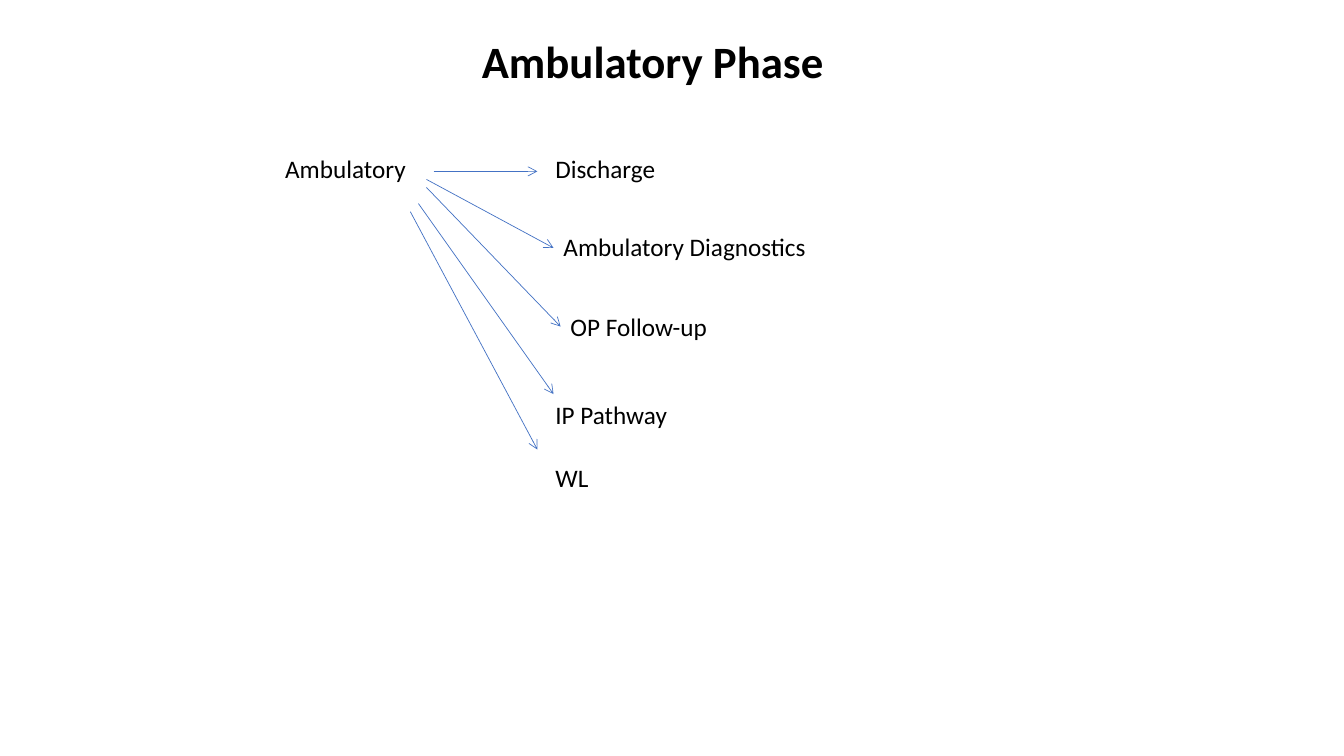
from dataclasses import dataclass

from lxml.etree import SubElement
from pptx import Presentation
from pptx.dml.color import RGBColor
from pptx.enum.shapes import MSO_CONNECTOR
from pptx.enum.text import MSO_AUTO_SIZE, PP_ALIGN
from pptx.oxml.ns import qn
from pptx.slide import Slide
from pptx.util import Inches, Pt


@dataclass(frozen=True)
class Theme:
    font: str = "Calibri"
    text: RGBColor = RGBColor(0x00, 0x00, 0x00)
    arrow: RGBColor = RGBColor(0x44, 0x72, 0xC4)
    title_size: int = 32
    label_size: int = 18
    arrow_width: float = 0.5


@dataclass(frozen=True)
class Label:
    text: str
    left: float
    top: float
    width: float = 1.81
    height: float = 0.4


@dataclass(frozen=True)
class Arrow:
    start: tuple[float, float]
    end: tuple[float, float]


@dataclass(frozen=True)
class Outcome:
    label: Label
    arrow: Arrow


THEME = Theme()
TITLE = Label("Ambulatory Phase", 3.52, 0.29, 5.91, 0.64)
ORIGIN = Label("Ambulatory", 2.73, 1.47)
OUTCOMES = [
    Outcome(Label("Discharge", 5.41, 1.47), Arrow((4.3, 1.7), (5.33, 1.7))),
    Outcome(Label("Ambulatory Diagnostics", 5.49, 2.25, 3.31), Arrow((4.23, 1.78), (5.49, 2.46))),
    Outcome(Label("OP Follow-up", 5.56, 3.04), Arrow((4.23, 1.86), (5.56, 3.24))),
    Outcome(Label("IP Pathway", 5.41, 3.91), Arrow((4.15, 2.02), (5.49, 3.91))),
    Outcome(Label("WL", 5.41, 4.54), Arrow((4.07, 2.1), (5.33, 4.46))),
]


def add_label(
    slide: Slide,
    label: Label,
    size: int = THEME.label_size,
    bold: bool = False,
    alignment: PP_ALIGN = PP_ALIGN.LEFT,
) -> None:
    shape = slide.shapes.add_textbox(
        Inches(label.left), Inches(label.top), Inches(label.width), Inches(label.height)
    )
    frame = shape.text_frame
    frame.word_wrap = True
    frame.auto_size = MSO_AUTO_SIZE.SHAPE_TO_FIT_TEXT
    paragraph = frame.paragraphs[0]
    paragraph.text = label.text
    paragraph.alignment = alignment
    paragraph.font.name = THEME.font
    paragraph.font.size = Pt(size)
    paragraph.font.bold = bold
    paragraph.font.color.rgb = THEME.text


def add_arrow(slide: Slide, arrow: Arrow) -> None:
    connector = slide.shapes.add_connector(
        MSO_CONNECTOR.STRAIGHT, *map(Inches, arrow.start + arrow.end)
    )
    connector.line.color.rgb = THEME.arrow
    connector.line.width = Pt(THEME.arrow_width)
    SubElement(connector.line._get_or_add_ln(), qn("a:tailEnd"), type="arrow")
    SubElement(connector._element.spPr, qn("a:effectLst"))


def main() -> None:
    presentation = Presentation()
    presentation.slide_width = Inches(13.33)
    presentation.slide_height = Inches(7.5)
    slide = presentation.slides.add_slide(presentation.slide_layouts[6])
    add_label(slide, TITLE, THEME.title_size, bold=True, alignment=PP_ALIGN.CENTER)
    add_label(slide, ORIGIN)
    for outcome in OUTCOMES:
        add_label(slide, outcome.label)
        add_arrow(slide, outcome.arrow)
    presentation.save("out.pptx")


if __name__ == "__main__":
    main()
